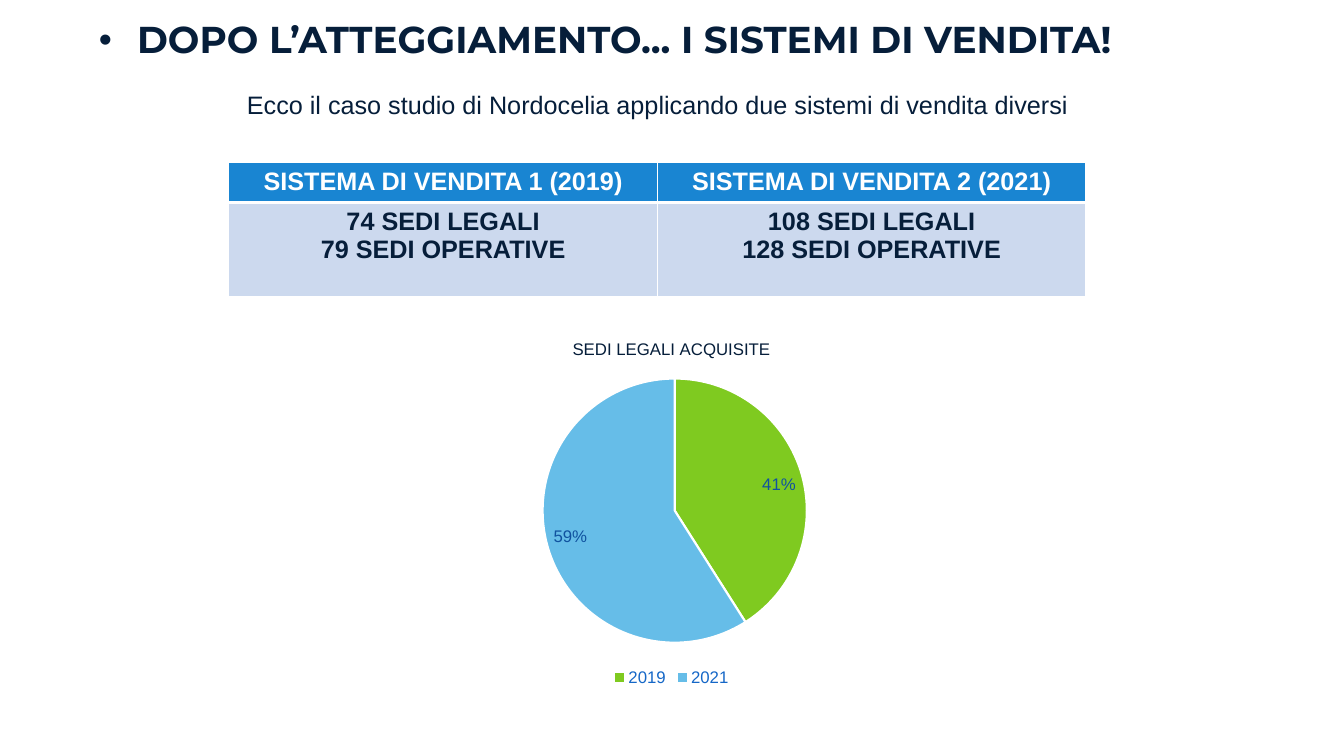
from lxml import etree
from pptx import Presentation
from pptx.chart.data import CategoryChartData
from pptx.dml.color import RGBColor
from pptx.enum.chart import XL_CHART_TYPE, XL_LABEL_POSITION, XL_LEGEND_POSITION
from pptx.enum.text import PP_ALIGN
from pptx.oxml import parse_xml
from pptx.oxml.ns import nsdecls, qn
from pptx.util import Inches, Pt

PIE = XL_CHART_TYPE.PIE
INSIDE_END = XL_LABEL_POSITION.INSIDE_END
BOTTOM = XL_LEGEND_POSITION.BOTTOM
LEFT, CENTER = PP_ALIGN.LEFT, PP_ALIGN.CENTER

NAVY, WHITE = "061E3A", "FFFFFF"
HEADER_FILL, BODY_FILL = "1985D2", "CCD9EE"
LABEL_BLUE, LEGEND_BLUE = "10529F", "1567C7"

TITLE = "DOPO L’ATTEGGIAMENTO... I SISTEMI DI VENDITA!"
SUBTITLE = "Ecco il caso studio di Nordocelia applicando due sistemi di vendita diversi"
SYSTEMS = [
    [["SISTEMA DI VENDITA 1 (2019)"], ["SISTEMA DI VENDITA 2 (2021)"]],
    [["74 SEDI LEGALI", "79 SEDI OPERATIVE"],
     ["108 SEDI LEGALI", "128 SEDI OPERATIVE"]],
]
ROW_STYLES = [
    {"height": 0.38, "fill": HEADER_FILL, "color": WHITE, "bottom": 3},
    {"height": 0.93, "fill": BODY_FILL, "color": NAVY, "bottom": 1},
]
COLUMN_WIDTH = 4.25
CHART_TITLE = "SEDI LEGALI ACQUISITE"
OFFICES = {"2019": (41, "7FCA20"), "2021": (59, "66BDE8")}
PLOT_SHARES = {"x": 0.3, "y": 0.15, "w": 0.41, "h": 0.72}


def rgb(value):
    return RGBColor.from_string(value)


def style(font, size, color, name="Arial", bold=False):
    font.size, font.name, font.bold = Pt(size), name, bold
    font.color.rgb = rgb(color)


def write(frame, lines, size=18, color=NAVY, name="Arial", bold=False, align=CENTER):
    frame.word_wrap = True
    for index, line in enumerate(lines):
        para = frame.add_paragraph() if index else frame.paragraphs[0]
        para.alignment = align
        span = para.add_run()
        span.text = line
        style(span.font, size, color, name, bold)


def add_title(page):
    box = page.shapes.add_textbox(Inches(0.86), Inches(0.21), Inches(11.91), Inches(0.91))
    frame = box.text_frame
    frame.margin_left = frame.margin_top = frame.margin_right = frame.margin_bottom = 0
    para = frame.paragraphs[0]
    para.line_spacing = 0.9
    properties = para._p.get_or_add_pPr()
    properties.set("marL", str(Inches(0.5)))
    properties.set("indent", str(Inches(-0.38)))
    for tag, child in (
        ("buClr", f'<a:srgbClr val="{NAVY}"/>'),
        ("buFont", None),
        ("buChar", None),
    ):
        attributes = {"buFont": 'typeface="Arial"', "buChar": 'char="•"'}.get(tag, "")
        properties.append(parse_xml(
            f'<a:{tag} {nsdecls("a")} {attributes}>{child or ""}</a:{tag}>'))
    write(frame, [TITLE], size=26.7, name="Montserrat", bold=True, align=LEFT)


def add_subtitle(page):
    box = page.shapes.add_textbox(Inches(1.33), Inches(0.84), Inches(10.38), Inches(0.4))
    write(box.text_frame, [SUBTITLE])


def set_borders(cell, bottom, top):
    properties = cell._tc.get_or_add_tcPr()
    widths = {"lnL": 1, "lnR": 1, "lnT": top, "lnB": bottom}
    for index, (tag, width) in enumerate(widths.items()):
        properties.insert(index, parse_xml(
            f'<a:{tag} {nsdecls("a")} w="{Pt(width)}"><a:solidFill>'
            f'<a:srgbClr val="{WHITE}"/></a:solidFill></a:{tag}>'))


def add_systems_table(page):
    heights = [row["height"] for row in ROW_STYLES]
    table = page.shapes.add_table(
        len(SYSTEMS), len(SYSTEMS[0]), Inches(2.27), Inches(1.61),
        Inches(COLUMN_WIDTH * len(SYSTEMS[0])), Inches(sum(heights))).table
    for column in table.columns:
        column.width = Inches(COLUMN_WIDTH)
    top = 1
    for row_index, (row, look) in enumerate(zip(SYSTEMS, ROW_STYLES)):
        table.rows[row_index].height = Inches(look["height"])
        for column_index, lines in enumerate(row):
            cell = table.cell(row_index, column_index)
            cell.fill.solid()
            cell.fill.fore_color.rgb = rgb(look["fill"])
            set_borders(cell, look["bottom"], top)
            write(cell.text_frame, lines, color=look["color"], bold=True)
        top = look["bottom"]


def place_plot(chart):
    plot_area = chart._chartSpace.chart.plotArea
    for old in plot_area.findall(qn("c:layout")):
        plot_area.remove(old)
    layout = etree.Element(qn("c:layout"))
    manual = etree.SubElement(layout, qn("c:manualLayout"))
    settings = {"layoutTarget": "inner", "xMode": "edge", "yMode": "edge", **PLOT_SHARES}
    for tag, value in settings.items():
        etree.SubElement(manual, qn(f"c:{tag}")).set("val", str(value))
    plot_area.insert(0, layout)


def add_offices_chart(page):
    data = CategoryChartData()
    data.categories = list(OFFICES)
    data.add_series(CHART_TITLE, [value for value, _ in OFFICES.values()])
    chart = page.shapes.add_chart(
        PIE, Inches(3.44), Inches(3.21), Inches(6.44), Inches(3.64), data).chart
    style(chart.font, 10, NAVY)
    chart.has_title = True
    write(chart.chart_title.text_frame, [CHART_TITLE], size=12)
    chart.chart_title.include_in_layout = False
    chart.has_legend = True
    chart.legend.position = BOTTOM
    chart.legend.include_in_layout = False
    style(chart.legend.font, 12, LEGEND_BLUE)
    plot = chart.plots[0]
    plot.vary_by_categories = True
    for index, (_, color) in enumerate(OFFICES.values()):
        look = plot.series[0].points[index].format
        look.fill.solid()
        look.fill.fore_color.rgb = rgb(color)
        look.line.color.rgb = rgb(WHITE)
        look.line.width = Pt(1.5)
    plot.has_data_labels = True
    labels = plot.data_labels
    labels.show_percentage, labels.show_value = True, False
    labels.number_format, labels.number_format_is_linked = "0%", False
    labels.position = INSIDE_END
    style(labels.font, 12, LABEL_BLUE)
    place_plot(chart)


def main():
    deck = Presentation()
    deck.slide_width, deck.slide_height = Inches(13.33), Inches(7.5)
    page = deck.slides.add_slide(deck.slide_layouts[6])
    add_title(page)
    add_systems_table(page)
    add_subtitle(page)
    add_offices_chart(page)
    deck.save("out.pptx")


if __name__ == "__main__":
    main()
